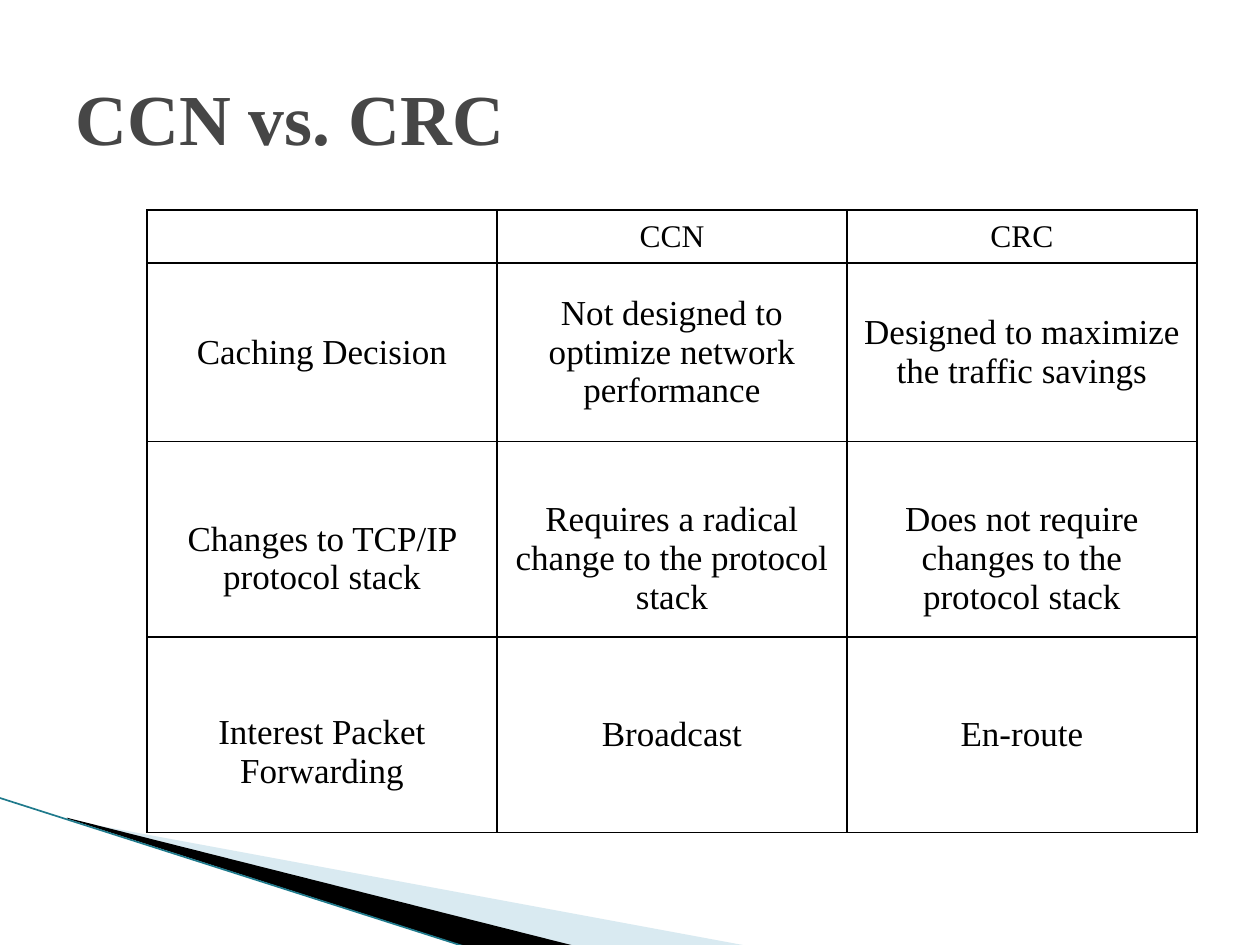
from dataclasses import dataclass
from lxml.etree import SubElement
from pptx import Presentation
from pptx.dml.color import RGBColor
from pptx.enum.shapes import MSO_CONNECTOR
from pptx.enum.text import MSO_ANCHOR, MSO_AUTO_SIZE, PP_ALIGN
from pptx.oxml.ns import qn
from pptx.util import Pt


@dataclass(frozen=True)
class Theme:
    font: str = "Times New Roman"
    title: str = "464646"
    ink: str = "000000"
    pale: str = "A0CBDC"
    accent: str = "1F7A8C"
    title_size: float = 41
    head_size: float = 18
    body_size: float = 20


@dataclass(frozen=True)
class Wedge:
    points: tuple
    color: str
    alpha: int = 100


@dataclass(frozen=True)
class Row:
    height: float
    texts: tuple
    size: float
    drops: tuple = (0, 0, 0)


T = Theme()
COL_WIDTH = 200
WEDGES = (
    Wedge(((39.6, 468.7), (428.4, 540.7), (328.3, 540.7), (39.6, 468)), T.pale, 40),
    Wedge(((38.2, 467.3), (329, 540.7), (267.8, 541.4), (38.9, 468)), T.ink),
)
ROWS = (
    Row(30.2, ("", "CCN", "CRC"), T.head_size),
    Row(102.2, ("Caching Decision", "Not designed to optimize network performance",
                "Designed to maximize the traffic savings"), T.body_size),
    Row(111.6, ("Changes to TCP/IP protocol stack",
                "Requires a radical change to the protocol stack",
                "Does not require changes to the protocol stack"),
        T.body_size, (22, 22, 22)),
    Row(111.6, ("Interest Packet Forwarding", "Broadcast", "En-route"),
        T.body_size, (20, 0, 0)),
)


def style_font(font, size: float, color: str, bold: bool) -> None:
    for name, value in {"name": T.font, "size": Pt(size), "bold": bold}.items():
        setattr(font, name, value)
    font.color.rgb = RGBColor.from_string(color)


def draw_wedge(s, wedge: Wedge) -> None:
    pts = [(Pt(x), Pt(y)) for x, y in wedge.points]
    fb = s.shapes.build_freeform(*pts[0])
    fb.add_line_segments(pts[1:], close=True)
    sp = fb.convert_to_shape()
    sp.shadow.inherit = False
    sp.line.fill.background()
    sp.fill.solid()
    sp.fill.fore_color.rgb = RGBColor.from_string(wedge.color)
    if wedge.alpha < 100:
        clr = sp.fill._xPr.find(f".//{qn('a:srgbClr')}")
        SubElement(clr, qn("a:alpha"), val=str(wedge.alpha * 1000))


def draw_edge(s) -> None:
    cx = s.shapes.add_connector(MSO_CONNECTOR.STRAIGHT, Pt(-0.7), Pt(455.8),
                                Pt(267.1), Pt(541.4))
    cx.line.color.rgb = RGBColor.from_string(T.accent)
    cx.line.width = Pt(0.95)
    SubElement(cx._element.spPr, qn("a:effectLst"))


def draw_title(s, text: str) -> None:
    sp = s.shapes.title
    box = {"left": 36, "top": 21.6, "width": 648, "height": 90}
    for name, value in box.items():
        setattr(sp, name, Pt(value))
    tf = sp.text_frame
    frame = {"text": text, "word_wrap": True, "auto_size": MSO_AUTO_SIZE.NONE,
             "vertical_anchor": MSO_ANCHOR.MIDDLE}
    for name, value in frame.items():
        setattr(tf, name, value)
    p = tf.paragraphs[0]
    p.alignment = PP_ALIGN.LEFT
    style_font(p.runs[0].font, T.title_size, T.title, True)


def add_borders(cell) -> None:
    tc_pr = cell._tc.get_or_add_tcPr()
    for i, side in enumerate(("lnL", "lnR", "lnT", "lnB")):
        ln = SubElement(tc_pr, qn(f"a:{side}"), w=str(Pt(1)))
        fill = SubElement(ln, qn("a:solidFill"))
        SubElement(fill, qn("a:srgbClr"), val=T.ink)
        tc_pr.remove(ln)
        tc_pr.insert(i, ln)


def draw_cell(cell, text: str, size: float, drop: float) -> None:
    cell.fill.background()
    add_borders(cell)
    cell.vertical_anchor = MSO_ANCHOR.MIDDLE
    cell.margin_top = Pt(3.6 + drop)
    p = cell.text_frame.paragraphs[0]
    p.alignment = PP_ALIGN.CENTER
    style_font(p.font, size, T.ink, False)
    if text:
        r = p.add_run()
        r.text = text
        style_font(r.font, size, T.ink, False)


def draw_table(s, rows: tuple) -> None:
    cols = len(rows[0].texts)
    tbl = s.shapes.add_table(len(rows), cols, Pt(84), Pt(120), Pt(COL_WIDTH * cols),
                             Pt(sum(row.height for row in rows))).table
    tbl.first_row = tbl.horz_banding = False
    for col in tbl.columns:
        col.width = Pt(COL_WIDTH)
    for i, row in enumerate(rows):
        tbl.rows[i].height = Pt(row.height)
        for j, (text, drop) in enumerate(zip(row.texts, row.drops)):
            draw_cell(tbl.cell(i, j), text, row.size, drop)


def main() -> None:
    prs = Presentation()
    prs.slide_width, prs.slide_height = Pt(720), Pt(540)
    s = prs.slides.add_slide(prs.slide_layouts[5])
    for wedge in WEDGES:
        draw_wedge(s, wedge)
    draw_edge(s)
    draw_title(s, "CCN vs. CRC")
    draw_table(s, ROWS)
    prs.save("out.pptx")


if __name__ == "__main__":
    main()
